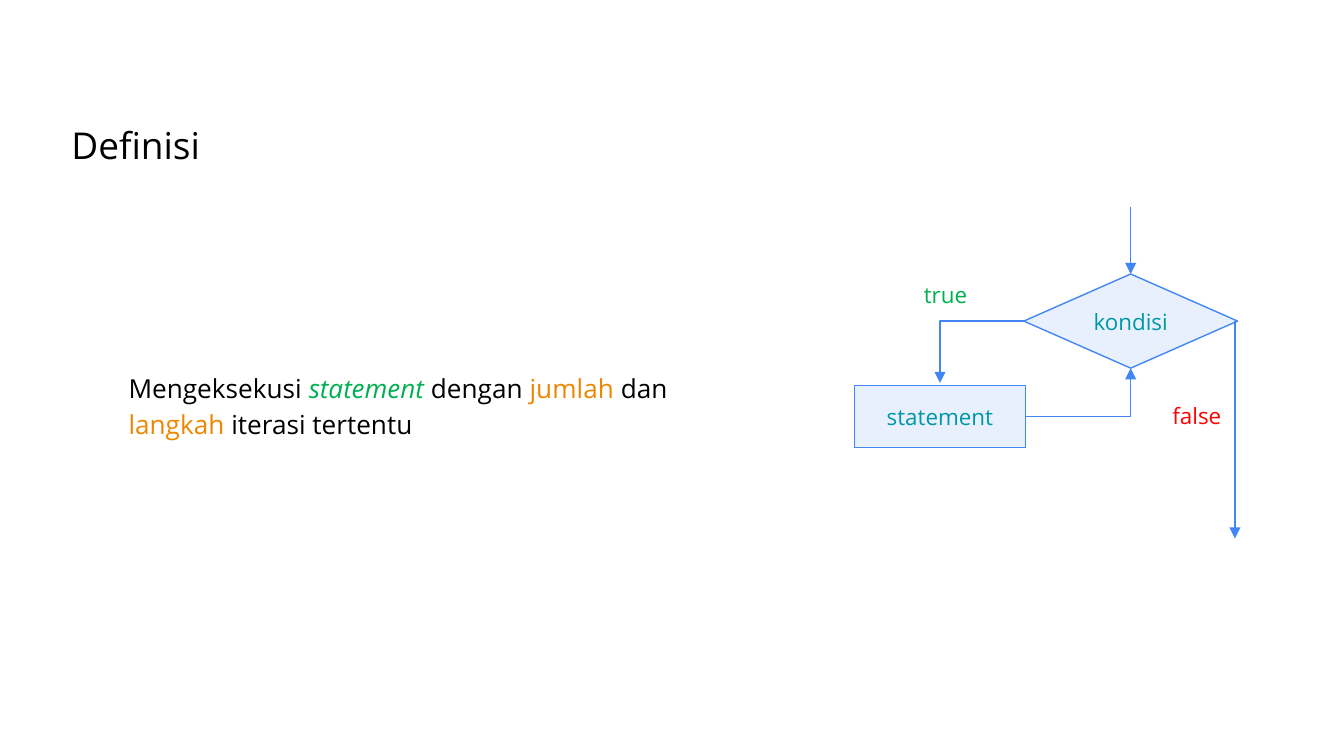
from collections import namedtuple
from dataclasses import dataclass

from lxml.etree import SubElement
from pptx import Presentation
from pptx.dml.color import RGBColor
from pptx.enum.shapes import MSO_CONNECTOR as Connector, MSO_SHAPE as Preset
from pptx.enum.text import MSO_ANCHOR as Anchor, PP_ALIGN as Align
from pptx.oxml.ns import qn
from pptx.util import Cm, Pt

Box = namedtuple("Box", "left top width height")


@dataclass(frozen=True)
class Theme:
    font: str = "Open Sans"
    ink: str = "000000"
    line: str = "4285F4"
    node: str = "8EB6F8"
    node_text: str = "0097A7"
    positive: str = "00B050"
    negative: str = "FF0000"
    accent: str = "EF8600"
    title_size: float = 19.8
    body_size: float = 14
    label_size: float = 12
    line_width: float = 0.75
    node_opacity: int = 20


THEME = Theme()


def rgb(color):
    return RGBColor.from_string(color)


def lengths(box):
    return [Cm(value) for value in box]


def within(outer, left, top, width, height):
    """Turn a position inside the outer box into a position on the slide."""
    return Box(outer.left + left, outer.top + top, width, height)


def write(shape, *runs, size=THEME.label_size, color=THEME.ink, align=Align.LEFT,
          anchor=Anchor.TOP, inset=0.25, line_spacing=None):
    """Fill a shape with one paragraph; a run is a text or (text, color, italic)."""
    frame = shape.text_frame
    frame.word_wrap = True
    frame.vertical_anchor = anchor
    frame.margin_left = frame.margin_right = Cm(inset)
    frame.margin_top = frame.margin_bottom = Cm(0.25)
    paragraph = frame.paragraphs[0]
    paragraph.alignment = align
    if line_spacing:
        paragraph.line_spacing = line_spacing
    for item in runs:
        text, run_color, italic = (item, color, False) if isinstance(item, str) else item
        run = paragraph.add_run()
        run.text = text
        run.font.name = THEME.font
        run.font.size = Pt(size)
        run.font.italic = italic
        run.font.color.rgb = rgb(run_color)


def add_text(slide, box, *runs, **text_format):
    write(slide.shapes.add_textbox(*lengths(box)), *runs, **text_format)


def add_label(slide, box, text, color):
    add_text(slide, box, text, color=color, align=Align.CENTER, anchor=Anchor.MIDDLE)


def add_node(slide, preset, box, text):
    shape = slide.shapes.add_shape(preset, *lengths(box))
    shape.shadow.inherit = False
    shape.fill.solid()
    shape.fill.fore_color.rgb = rgb(THEME.node)
    color = shape.fill._xPr.find(".//" + qn("a:srgbClr"))
    SubElement(color, qn("a:alpha"), val=str(THEME.node_opacity * 1000))
    shape.line.color.rgb = rgb(THEME.line)
    shape.line.width = Pt(THEME.line_width)
    write(shape, text, color=THEME.node_text, align=Align.CENTER, anchor=Anchor.MIDDLE)
    return shape


def style_arrow(arrow):
    arrow.line.color.rgb = rgb(THEME.line)
    arrow.line.width = Pt(THEME.line_width)
    SubElement(arrow.line._get_or_add_ln(), qn("a:tailEnd"), type="triangle")


def add_straight_arrow(slide, *ends):
    arrow = slide.shapes.add_connector(Connector.STRAIGHT, *lengths(ends))
    style_arrow(arrow)
    SubElement(arrow._element.spPr, qn("a:effectLst"))
    return arrow


def add_bent_arrow(slide, *points):
    start, *rest = [lengths(point) for point in points]
    builder = slide.shapes.build_freeform(*start)
    builder.add_line_segments(rest, close=False)
    arrow = builder.convert_to_shape()
    arrow.fill.background()
    style_arrow(arrow)
    arrow.shadow.inherit = False


def add_title(slide, box):
    add_text(slide, box, "Definisi", size=THEME.title_size)


def add_definition(slide, box):
    add_text(slide, box,
             "Mengeksekusi ", ("statement ", THEME.positive, True), "dengan ",
             ("jumlah", THEME.accent, False), " dan ",
             ("langkah ", THEME.accent, False), "iterasi tertentu",
             size=THEME.body_size, line_spacing=1.15)


def add_loop_chart(slide, box):
    """Flowchart of a loop: the condition leads to the statement or to the exit."""
    decision = within(box, 3.2, 1.27, 4.04, 1.78)
    process = within(box, 0, 3.38, 3.23, 1.17)
    center_x = decision.left + decision.width / 2
    decision_y = decision.top + decision.height / 2
    process_x = process.left + process.width / 2
    process_y = process.top + process.height / 2
    exit_x = decision.left + decision.width - 0.05

    condition = add_node(slide, Preset.FLOWCHART_DECISION, decision, "kondisi")
    add_node(slide, Preset.FLOWCHART_PROCESS, process, "statement")

    entry = add_straight_arrow(slide, center_x, box.top, center_x, decision.top)
    entry.end_connect(condition, 0)
    add_bent_arrow(slide, (decision.left, decision_y), (process_x, decision_y),
                   (process_x, process.top - 0.05))
    add_bent_arrow(slide, (process.left + process.width, process_y),
                   (center_x, process_y), (center_x, decision.top + decision.height))
    add_straight_arrow(slide, exit_x, decision_y, exit_x, box.top + box.height)

    add_label(slide, within(box, 0.03, 1.27, 3.38, 0.79), "true", THEME.positive)
    add_label(slide, within(box, 4.78, 3.56, 3.38, 0.79), "false", THEME.negative)


def main():
    presentation = Presentation()
    presentation.slide_width = Cm(25.4)
    presentation.slide_height = Cm(14.29)
    slide = presentation.slides.add_slide(presentation.slide_layouts[6])
    add_title(slide, Box(1.1, 2.06, 23.2, 1.1))
    add_loop_chart(slide, Box(16.15, 3.91, 8.16, 6.27))
    add_definition(slide, Box(2.18, 6.71, 11.18, 3.45))
    presentation.save("out.pptx")


if __name__ == "__main__":
    main()
